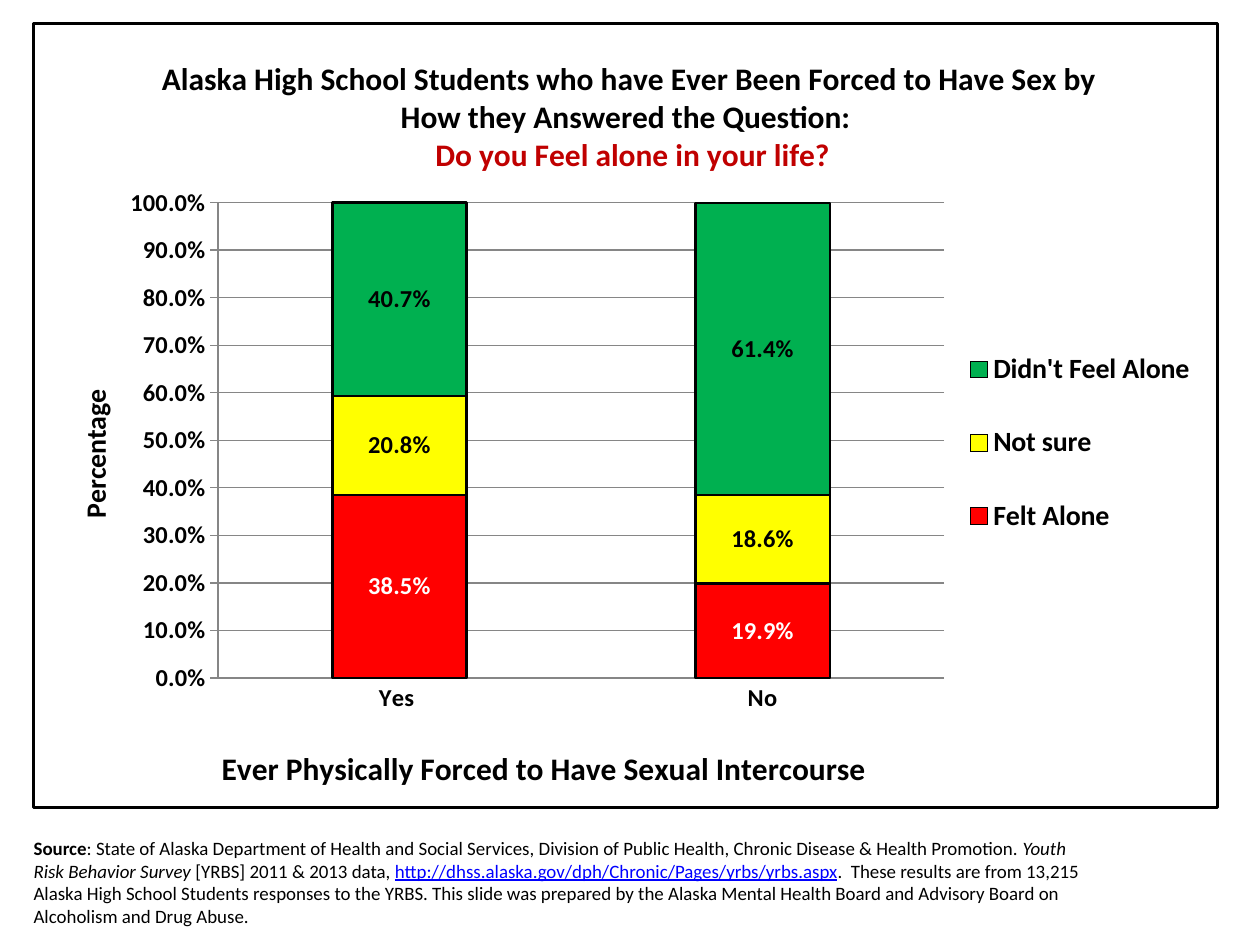
from lxml import etree
from pptx import Presentation
from pptx.chart.data import CategoryChartData
from pptx.dml.color import RGBColor
from pptx.enum.chart import XL_CHART_TYPE, XL_LABEL_POSITION, XL_LEGEND_POSITION, XL_TICK_MARK
from pptx.enum.text import MSO_ANCHOR, MSO_AUTO_SIZE, PP_ALIGN
from pptx.oxml import parse_xml
from pptx.oxml.ns import qn
from pptx.util import Pt

STACKED = XL_CHART_TYPE.COLUMN_STACKED
CENTER = XL_LABEL_POSITION.CENTER
RIGHT = XL_LEGEND_POSITION.RIGHT
OUT, NONE = XL_TICK_MARK.OUTSIDE, XL_TICK_MARK.NONE
LEFT, MIDDLE = PP_ALIGN.LEFT, MSO_ANCHOR.MIDDLE
FIXED = MSO_AUTO_SIZE.NONE

PX = 914400 // 126
FONT = "Calibri"
FORMAT = "0.0%"
COLORS = {"black": "000000", "white": "FFFFFF", "red": "FF0000", "yellow": "FFFF00",
          "green": "00B050", "title": "C00000", "link": "0000FF", "grid": "868686"}
FRAME = (32, 22, 1187, 787)
NS = ('xmlns:c="http://schemas.openxmlformats.org/drawingml/2006/chart" '
      'xmlns:a="http://schemas.openxmlformats.org/drawingml/2006/main"')
SERIES = [("Felt Alone", (0.385, 0.199), "red", "white"),
          ("Not sure ", (0.208, 0.186), "yellow", "black"),
          ("Didn't Feel Alone", (0.407, 0.614), "green", "black")]
SOURCE = [
    ("Source", {"bold": True}),
    (": State of Alaska Department of Health and Social Services, Division of Public Health, "
     "Chronic Disease & Health Promotion. ", {}),
    ("Youth Risk Behavior Survey ", {"italic": True}),
    ("[YRBS] 2011 & 2013 data, ", {}),
    ("http://dhss.alaska.gov/dph/Chronic/Pages/yrbs/yrbs.aspx",
     {"color": "link", "underline": True}),
    (".  These results are from 13,215 Alaska High School Students responses to the YRBS. "
     "This slide was prepared by the Alaska Mental Health Board and Advisory Board on "
     "Alcoholism and Drug Abuse.", {}),
]


def rgb(name):
    return RGBColor.from_string(COLORS[name])


def style(font, size, color="black", bold=False, italic=False, underline=False):
    font.name, font.size, font.bold = FONT, Pt(size), bold
    font.italic, font.underline = italic, underline
    font.color.rgb = rgb(color)


def write(para, text, **format):
    run = para.add_run()
    run.text = text
    style(run.font, **format)


def outline(line, color="black", width=1.5):
    line.color.rgb = rgb(color)
    line.width = Pt(width)


def place(node, after, left, top, width=None, height=None, inner=False):
    """Set a chart part's manual layout, in px on the slide."""
    for old in node.findall(qn("c:layout")):
        node.remove(old)
    x, y, w, h = FRAME
    sizes = {"x": (left - x) / w, "y": (top - y) / h}
    if width:
        sizes.update(w=width / w, h=height / h)
    layout = parse_xml(f"<c:layout {NS}><c:manualLayout/></c:layout>")
    manual = layout[0]
    if inner:
        etree.SubElement(manual, qn("c:layoutTarget")).set("val", "inner")
    for tag in ("xMode", "yMode"):
        etree.SubElement(manual, qn(f"c:{tag}")).set("val", "edge")
    for key, part in sizes.items():
        etree.SubElement(manual, qn(f"c:{key}")).set("val", f"{part:.4f}")
    if after:
        node.find(qn(after)).addnext(layout)
    else:
        node.insert(0, layout)


def add_title(owner, lines, left, top, size, turn=0):
    """Title a chart or axis with (text, color) lines."""
    owner.has_title = True
    title = owner.chart_title if hasattr(owner, "chart_title") else owner.axis_title
    frame = title.text_frame
    for i, (text, color) in enumerate(lines):
        para = frame.add_paragraph() if i else frame.paragraphs[0]
        write(para, text, size=size, color=color, bold=True)
    body = title._element.find(".//" + qn("a:bodyPr"))
    body.set("rot", str(turn * 60000))
    body.set("vert", "horz")
    place(title._element, "c:tx", left, top)


def fill_series(plot):
    for series, (_, _, color, ink) in zip(plot.series, SERIES):
        series.format.fill.solid()
        series.format.fill.fore_color.rgb = rgb(color)
        outline(series.format.line)
        labels = series.data_labels
        labels.show_value = True
        labels.number_format, labels.number_format_is_linked = FORMAT, False
        labels.position = CENTER
        style(labels.font, 14, ink, bold=True)


def set_axes(chart):
    cats, values = chart.category_axis, chart.value_axis
    for axis, tick in ((cats, NONE), (values, OUT)):
        axis.major_tick_mark, axis.minor_tick_mark = tick, NONE
        style(axis.tick_labels.font, 14, bold=True)
        outline(axis.format.line, "grid", 0.75)
    values.minimum_scale, values.maximum_scale, values.major_unit = 0, 1, 0.1
    values.has_major_gridlines = True
    outline(values.major_gridlines.format.line, "grid", 0.75)
    values.tick_labels.number_format = FORMAT
    values.tick_labels.number_format_is_linked = False
    add_title(cats, [("Ever Physically Forced to Have Sexual Intercourse", "black")],
              215, 742, 18)
    add_title(values, [("Percentage", "black")], 70, 385, 16, turn=-90)


def add_border(chart):
    space = chart._chartSpace
    border = parse_xml(
        f'<c:spPr {NS}><a:solidFill><a:srgbClr val="{COLORS["white"]}"/></a:solidFill>'
        f'<a:ln w="{Pt(1.5)}"><a:solidFill><a:srgbClr val="{COLORS["black"]}"/>'
        '</a:solidFill></a:ln></c:spPr>')
    space.find(qn("c:chart")).addnext(border)


def add_survey(slide):
    data = CategoryChartData(number_format=FORMAT)
    data.categories = ["Yes ", "No"]
    for name, values, _, _ in SERIES:
        data.add_series(name, values)
    chart = slide.shapes.add_chart(STACKED, *(n * PX for n in FRAME), data).chart
    style(chart.font, 10)
    plot = chart.plots[0]
    plot.gap_width, plot.overlap, plot.vary_by_categories = 170, 100, False
    fill_series(plot)
    set_axes(chart)
    add_title(chart, [
        ("Alaska High School Students who have Ever Been Forced to Have Sex by "
         "How they Answered the Question: ", "black"),
        (" Do you Feel alone in your life?", "title")], 157, 53, 18)
    chart.has_legend = True
    legend = chart.legend
    legend.position, legend.include_in_layout = RIGHT, False
    style(legend.font, 16, bold=True)
    place(legend._element, "c:legendPos", 962, 313, 238, 260)
    place(chart._chartSpace.find(".//" + qn("c:plotArea")), None,
          217, 202, 728, 477, inner=True)
    add_border(chart)


def add_source(slide):
    box = slide.shapes.title
    box.left, box.top, box.width, box.height = (n * PX for n in (21, 840, 1071, 84))
    frame = box.text_frame
    frame.word_wrap, frame.auto_size = True, FIXED
    frame.vertical_anchor = MIDDLE
    para = frame.paragraphs[0]
    para.alignment = LEFT
    for text, format in SOURCE:
        write(para, text, size=10.8, **format)


def main():
    deck = Presentation()
    deck.slide_width, deck.slide_height = 1260 * PX, 945 * PX
    slide = deck.slides.add_slide(deck.slide_layouts[5])
    add_source(slide)
    add_survey(slide)
    deck.save("out.pptx")


if __name__ == "__main__":
    main()
